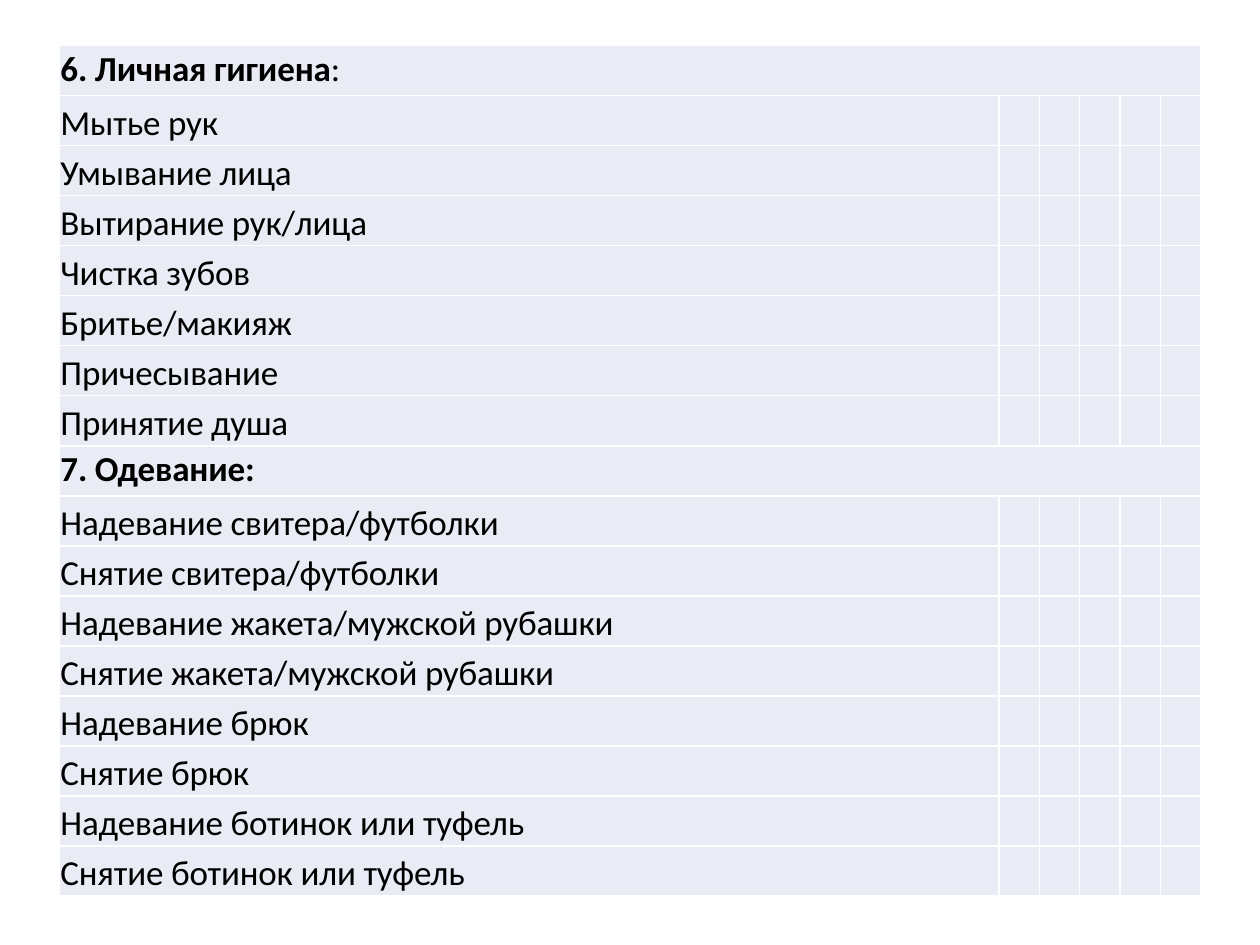
from lxml import etree
from pptx import Presentation
from pptx import util as u
from pptx.dml.color import RGBColor
from pptx.oxml import ns

COLORS = {"cell": "E9ECF4", "border": "FFFFFF", "text": "000000"}
WIDTH, HEIGHT = u.Inches(10), u.Inches(7.5)
COLUMNS = [0.746] + [0.032] * 5
TABLE_TOP, TABLE_HEIGHT = 0.048, 0.9013
SECTIONS = [
    ("6. Личная гигиена", ":", False, [
        "Мытье рук", "Умывание лица", "Вытирание рук/лица", "Чистка зубов",
        "Бритье/макияж", "Причесывание", "Принятие душа"]),
    ("7. Одевание", ":", True, [
        "Надевание свитера/футболки", "Снятие свитера/футболки",
        "Надевание жакета/мужской рубашки", "Снятие жакета/мужской рубашки",
        "Надевание брюк", "Снятие брюк",
        "Надевание ботинок или туфель", "Снятие ботинок или туфель"]),
]


def set_all(target, values):
    for name, value in values.items():
        setattr(target, name, value)


def style_cell(cell):
    set_all(cell, dict.fromkeys(
        ["margin_left", "margin_top", "margin_right", "margin_bottom"], 0))
    properties = cell._tc.get_or_add_tcPr()
    for side in ("lnL", "lnR", "lnT", "lnB"):
        line = etree.SubElement(properties, ns.qn(f"a:{side}"), w=str(u.Pt(1)))
        fill = etree.SubElement(line, ns.qn("a:solidFill"))
        etree.SubElement(fill, ns.qn("a:srgbClr"), val=COLORS["border"])
    cell.fill.solid()
    cell.fill.fore_color.rgb = RGBColor.from_string(COLORS["cell"])


def write_cell(cell, parts, top, before):
    cell.margin_top = u.Inches(top)
    para = cell.text_frame.paragraphs[0]
    para.space_before = u.Pt(before)
    para._p.get_or_add_pPr().set("marL", str(u.Inches(0.01)))
    for words, bold in parts:
        span = para.add_run()
        span.text = words
        set_all(span.font, {"name": "Calibri", "size": u.Pt(20), "bold": bold})
        span.font.color.rgb = RGBColor.from_string(COLORS["text"])
        span.font._element.set("spc", "-10")


def add_checklist(page):
    count = sum(1 + len(items) for *_, items in SECTIONS)
    widths = [int(WIDTH * share) for share in COLUMNS]
    left = (WIDTH - sum(widths)) // 2
    table_height = int(HEIGHT * TABLE_HEIGHT)
    table = page.shapes.add_table(
        count, len(widths), left, int(HEIGHT * TABLE_TOP),
        sum(widths), table_height).table
    set_all(table, {"first_row": False, "horz_banding": False})
    for column, width in zip(table.columns, widths):
        column.width = width
    for row in table.rows:
        row.height = table_height // count
        for cell in row.cells:
            style_cell(cell)
    return table


def fill_checklist(table):
    row = 0
    for title, mark, bold_mark, items in SECTIONS:
        heading = table.cell(row, 0)
        heading.merge(table.cell(row, len(COLUMNS) - 1))
        write_cell(heading, [(title, True), (mark, bold_mark)], 0.02, 1.4)
        for row, item in enumerate(items, row + 1):
            write_cell(table.cell(row, 0), [(item, False)], 0.05, 3.4)
        row += 1


def main():
    deck = Presentation()
    set_all(deck, {"slide_width": WIDTH, "slide_height": HEIGHT})
    page = deck.slides.add_slide(deck.slide_layouts[6])
    fill_checklist(add_checklist(page))
    deck.save("out.pptx")


if __name__ == "__main__":
    main()
